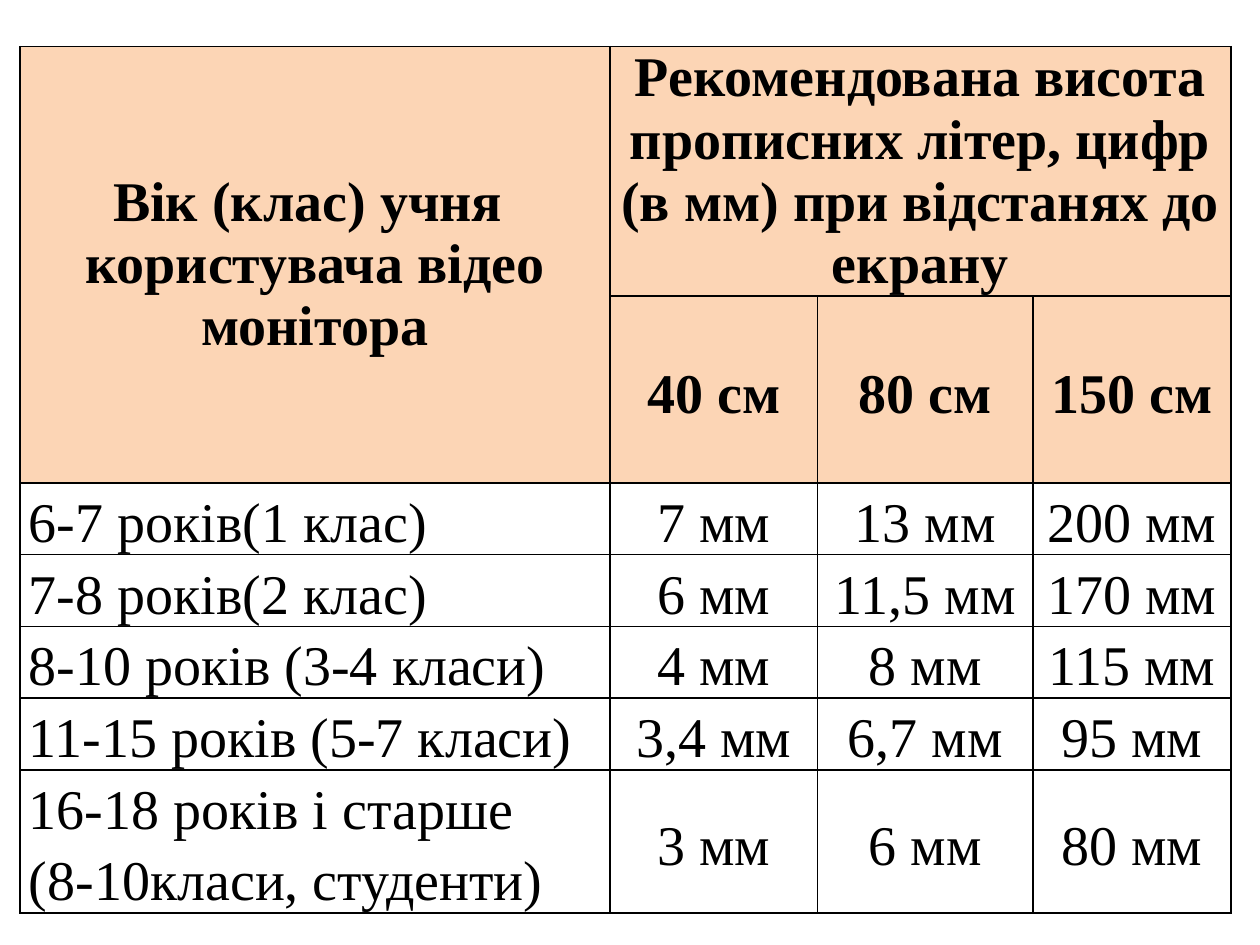
from dataclasses import dataclass

from pptx import Presentation
from pptx.dml.color import RGBColor
from pptx.enum.text import MSO_ANCHOR, PP_ALIGN
from pptx.oxml.ns import qn
from pptx.util import Inches, Pt
from lxml import etree

CENTER, JUSTIFY = PP_ALIGN.CENTER, PP_ALIGN.JUSTIFY
TOP, MIDDLE = MSO_ANCHOR.TOP, MSO_ANCHOR.MIDDLE
BLANK_LAYOUT = 6


@dataclass(frozen=True)
class Theme:
    font: str = "Times New Roman"
    size: int = 32
    text: str = "000000"
    background: str = "FFFFFF"
    header: str = "FCD5B5"
    border: str = "000000"
    border_width: int = 1
    line_spacing: float = 1.15


THEME = Theme()
CELL_MARGINS = {
    "margin_left": Inches(0.07),
    "margin_right": Inches(0.07),
    "margin_top": 0,
    "margin_bottom": 0,
}
COLUMN_WIDTHS = [4.68, 1.65, 1.71, 1.57]
ROW_HEIGHTS = [1.98, 1.48, 0.57, 0.57, 0.57, 0.57, 1.13]
AGE_HEADER = "Вік (клас) учня \nкористувача відео монітора"
HEIGHT_HEADER = "Рекомендована висота прописних літер, цифр (в мм) при відстанях до екрану"
DISTANCES = ["40 см", "80 см", "150 см"]
LETTER_HEIGHTS = [
    ("6-7 років(1 клас) ", "7 мм", "13 мм", "200 мм"),
    ("7-8 років(2 клас) ", "6 мм", "11,5 мм", "170 мм"),
    ("8-10 років (3-4 класи) ", "4 мм", "8 мм", "115 мм"),
    ("11-15 років (5-7 класи) ", "3,4 мм", "6,7 мм", "95 мм"),
    ("16-18 років і старше \n(8-10класи, студенти) ", "3 мм", "6 мм", "80 мм"),
]


def set_attributes(target, values):
    for name, value in values.items():
        setattr(target, name, value)


def add_borders(cell):
    """Draw all four sides; borders must precede the fill in the cell properties."""
    properties = cell._tc.get_or_add_tcPr()
    for index, side in enumerate(("a:lnL", "a:lnR", "a:lnT", "a:lnB")):
        line = etree.Element(qn(side), w=str(Pt(THEME.border_width)))
        fill = etree.SubElement(line, qn("a:solidFill"))
        etree.SubElement(fill, qn("a:srgbClr"), val=THEME.border)
        properties.insert(index, line)


def style_cell(cell, fill=None):
    set_attributes(cell, CELL_MARGINS)
    if fill:
        cell.fill.solid()
        cell.fill.fore_color.rgb = RGBColor.from_string(fill)
    else:
        cell.fill.background()
    add_borders(cell)


def write_cell(cell, text, bold=False, alignment=CENTER, anchor=MIDDLE,
               line_spacing=THEME.line_spacing):
    cell.text = text
    cell.vertical_anchor = anchor
    for paragraph in cell.text_frame.paragraphs:
        set_attributes(paragraph, {"alignment": alignment, "line_spacing": line_spacing})
        for run in paragraph.runs:
            set_attributes(run.font, {"name": THEME.font, "size": Pt(THEME.size), "bold": bold})
            run.font.color.rgb = RGBColor.from_string(THEME.text)


def write_header(table):
    table.cell(0, 0).merge(table.cell(1, 0))
    table.cell(0, 1).merge(table.cell(0, 3))
    write_cell(table.cell(0, 0), AGE_HEADER, bold=True, line_spacing=1.0)
    write_cell(table.cell(0, 1), HEIGHT_HEADER, bold=True, line_spacing=1.0)
    for column, distance in enumerate(DISTANCES, start=1):
        write_cell(table.cell(1, column), distance, bold=True)


def write_body(table):
    for row, (age, *heights) in enumerate(LETTER_HEIGHTS, start=2):
        anchor = MIDDLE if row == 3 else TOP
        write_cell(table.cell(row, 0), age, alignment=JUSTIFY, anchor=anchor)
        for column, height in enumerate(heights, start=1):
            write_cell(table.cell(row, column), height)


def add_letter_height_table(slide, left, top, width, height):
    table = slide.shapes.add_table(
        len(ROW_HEIGHTS), len(COLUMN_WIDTHS), left, top, width, height).table
    set_attributes(table, {"first_row": False, "horz_banding": False})
    for column, share in zip(table.columns, COLUMN_WIDTHS):
        column.width = round(width * share / sum(COLUMN_WIDTHS))
    for row, share in zip(table.rows, ROW_HEIGHTS):
        row.height = round(height * share / sum(ROW_HEIGHTS))
    for index, row in enumerate(table.rows):
        for cell in row.cells:
            style_cell(cell, THEME.header if index < 2 else None)
    write_header(table)
    write_body(table)


def main():
    presentation = Presentation()
    set_attributes(presentation, {"slide_width": Inches(10), "slide_height": Inches(7.5)})
    slide = presentation.slides.add_slide(presentation.slide_layouts[BLANK_LAYOUT])
    background = slide.background.fill
    background.solid()
    background.fore_color.rgb = RGBColor.from_string(THEME.background)
    add_letter_height_table(slide, Inches(0.16), Inches(0.37),
                            Inches(sum(COLUMN_WIDTHS)), Inches(sum(ROW_HEIGHTS)))
    presentation.save("out.pptx")


if __name__ == "__main__":
    main()
